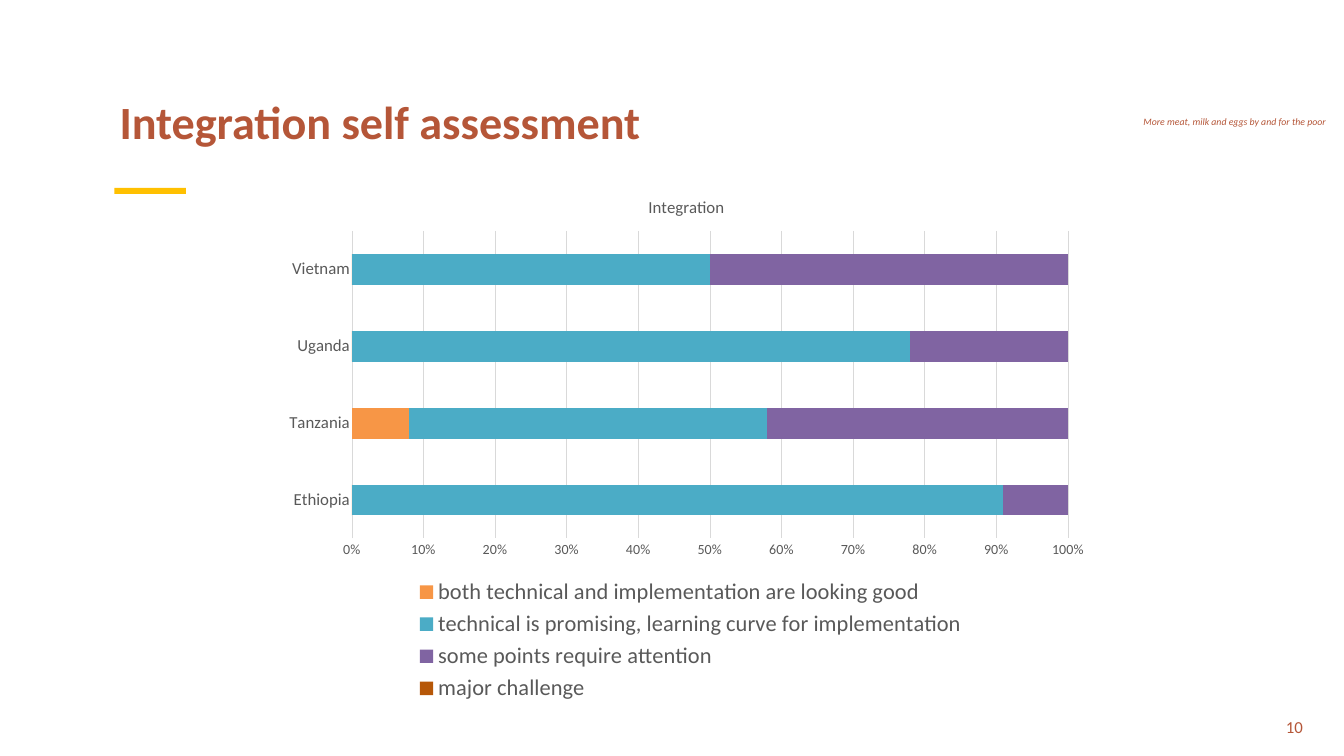
"""Builds the integration self assessment slide with its stacked bar chart."""
from lxml import etree
from pptx import Presentation
from pptx.chart.data import CategoryChartData
from pptx.dml.color import RGBColor
from pptx.enum.chart import XL_CHART_TYPE as CT, XL_LEGEND_POSITION as LP, XL_TICK_MARK as TM
from pptx.enum.shapes import MSO_SHAPE as SHAPE
from pptx.enum.text import MSO_ANCHOR as ANCHOR, MSO_AUTO_SIZE as AUTO, PP_ALIGN as AL
from pptx.oxml.ns import qn
from pptx.util import Cm, Pt

RUST, GOLD, GREY, PALE = "B55638", "FFC000", "595959", "D9D9D9"
COUNTRIES = ["Ethiopia", "Tanzania", "Uganda", "Vietnam"]
RATINGS = [
    ("both technical and implementation are looking good", [0, 8, 0, 0], "F79646"),
    ("technical is promising, learning curve for implementation", [91, 50, 78, 50], "4BACC6"),
    ("some points require attention", [9, 42, 22, 50], "8064A2"),
    ("major challenge", [0, 0, 0, 0], "B65708"),
]


def rgb(value):
    return RGBColor.from_string(value)


def place(element, index, inner=False, **fractions):
    for old in element.findall(qn("c:layout")):
        element.remove(old)
    layout = etree.Element(qn("c:layout"))
    manual = etree.SubElement(layout, qn("c:manualLayout"))
    settings = {"layoutTarget": "inner"} if inner else {}
    settings.update(xMode="edge", yMode="edge", **fractions)
    for name, value in settings.items():
        etree.SubElement(manual, qn(f"c:{name}")).set("val", str(value))
    element.insert(index, layout)


class Deck:
    def __init__(self, width, height, font):
        self.prs = Presentation()
        self.prs.slide_width, self.prs.slide_height = Cm(width), Cm(height)
        self.s = self.prs.slides.add_slide(self.prs.slide_layouts[5])
        self.font = font

    def style(self, font, size, color, bold=False, italic=False):
        font.name, font.size = self.font, Pt(size)
        font.bold, font.italic = bold, italic
        font.color.rgb = rgb(color)

    def title(self, text, box, size, color):
        sp = self.s.shapes.title
        sp.left, sp.top, sp.width, sp.height = map(Cm, box)
        tf = sp.text_frame
        tf.text, tf.vertical_anchor, tf.auto_size = text, ANCHOR.TOP, AUTO.NONE
        p = tf.paragraphs[0]
        p.alignment = AL.LEFT
        self.style(p.font, size, color, bold=True)

    def text(self, text, box, size, color, align=AL.LEFT, italic=False, wrap=True):
        tf = self.s.shapes.add_textbox(*map(Cm, box)).text_frame
        tf.text, tf.word_wrap = text, wrap
        p = tf.paragraphs[0]
        p.alignment = align
        self.style(p.font, size, color, italic=italic)

    def bar(self, box, color):
        sp = self.s.shapes.add_shape(SHAPE.RECTANGLE, *map(Cm, box))
        sp.shadow.inherit = False
        sp.fill.solid()
        sp.fill.fore_color.rgb = rgb(color)
        sp.line.fill.background()

    def line(self, line, color):
        line.color.rgb, line.width = rgb(color), Pt(0.75)

    def chart(self, title, categories, series, box):
        data = CategoryChartData(number_format="0")
        data.categories = categories
        for name, values, _ in series:
            data.add_series(name, values)
        chart = self.s.shapes.add_chart(CT.BAR_STACKED_100, *map(Cm, box), data).chart
        self.style(chart.font, 20, GREY)
        chart.has_title = True
        tf = chart.chart_title.text_frame
        tf.text = title
        self.style(tf.paragraphs[0].font, 24, GREY)

        plot = chart.plots[0]
        plot.gap_width, plot.overlap, plot.vary_by_categories = 150, 100, False
        for ser, (_, _, color) in zip(plot.series, series):
            ser.format.fill.solid()
            ser.format.fill.fore_color.rgb = rgb(color)

        cat, val = chart.category_axis, chart.value_axis
        for axis, size in ((cat, 24), (val, 20)):
            axis.major_tick_mark = axis.minor_tick_mark = TM.NONE
            self.style(axis.tick_labels.font, size, GREY)
        self.line(cat.format.line, PALE)
        val.format.line.fill.background()
        val.has_major_gridlines = True
        self.line(val.major_gridlines.format.line, PALE)
        val.minimum_scale, val.maximum_scale, val.major_unit = 0, 1, 0.1
        val.tick_labels.number_format = "0%"
        val.tick_labels.number_format_is_linked = False

        chart.has_legend = True
        legend = chart.legend
        legend.position, legend.include_in_layout = LP.BOTTOM, False
        self.style(legend.font, 32, GREY)
        root = chart.element
        place(root.find(f".//{qn('c:title')}"), 1, x=0.45, y=0.03)
        place(root.find(f".//{qn('c:plotArea')}"), 0, True, x=0.095, y=0.103, w=0.866, h=0.58)
        place(root.find(f".//{qn('c:legend')}"), 1, x=0.16, y=0.75, w=0.69, h=0.25)


def main():
    deck = Deck(67.74, 38.1, "Calibri")
    deck.text("10", (64.14, 35.97, 1.78, 1.27), 24, RUST, AL.RIGHT)
    deck.bar((5.77, 9.47, 3.6, 0.3), GOLD)
    deck.text("More meat, milk and eggs by and for the poor", (57.38, 5.72, 9.78, 0.86),
              14, RUST, italic=True, wrap=False)
    deck.title("Integration self assessment", (5.77, 4.6, 45.67, 4.88), 66, RUST)
    deck.chart("Integration", COUNTRIES, RATINGS, (13.77, 8.89, 41.68, 26.72))
    deck.prs.save("out.pptx")


if __name__ == "__main__":
    main()
